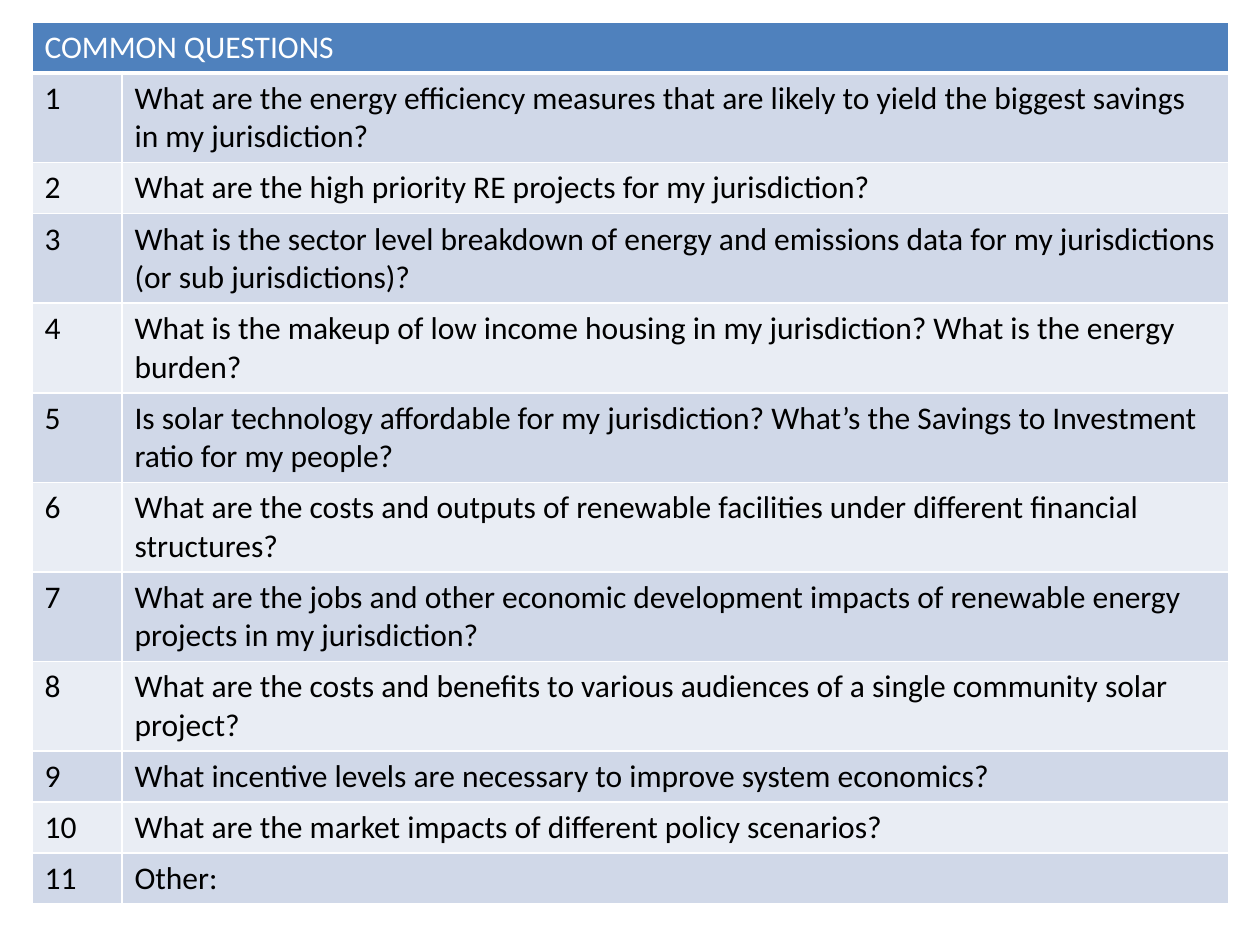
from lxml import etree
from pptx import Presentation
from pptx.dml.color import RGBColor
from pptx.oxml.ns import qn
from pptx.util import Inches, Pt

PX_PER_INCH = 126
SLIDE_WIDTH, SLIDE_HEIGHT = 1260, 945
TABLE_BOX = (32, 22, 1197, 873)
NUMBER_WIDTH = 90
ROW_HEIGHT = 51

WHITE = RGBColor(0xFF, 0xFF, 0xFF)
BLACK = RGBColor(0x00, 0x00, 0x00)
HEADER_BLUE = RGBColor(0x4F, 0x81, 0xBD)
BAND_COLORS = (RGBColor(0xD0, 0xD8, 0xE8), RGBColor(0xE9, 0xED, 0xF4))

FONT = {"name": "Calibri", "size": Pt(18), "bold": False}
BORDERS = {"a:lnL": 1, "a:lnR": 1, "a:lnT": 1, "a:lnB": 1}
HEADER_BORDERS = {**BORDERS, "a:lnB": 3}

TITLE = "COMMON QUESTIONS"
QUESTIONS = (
    "What are the energy efficiency measures that are likely to yield the biggest savings in my jurisdiction?",
    "What are the high priority RE projects for my jurisdiction?",
    "What is the sector level breakdown of energy and emissions data for my jurisdictions (or sub jurisdictions)?",
    "What is the makeup of low income housing in my jurisdiction? What is the energy burden?",
    "Is solar technology affordable for my jurisdiction? What’s the Savings to Investment ratio for my people?",
    "What are the costs and outputs of renewable facilities under different financial structures?",
    "What are the jobs and other economic development impacts of renewable energy projects in my jurisdiction?",
    "What are the costs and benefits to various audiences of a single community solar project?",
    "What incentive levels are necessary to improve system economics?",
    "What are the market impacts of different policy scenarios?",
    "Other:",
)


def px(length):
    return round(length * Inches(1) / PX_PER_INCH)


def set_borders(cell, borders):
    properties = cell._tc.get_or_add_tcPr()
    for side, points in borders.items():
        line = etree.SubElement(properties, qn(side), w=str(Pt(points)))
        line_fill = etree.SubElement(line, qn("a:solidFill"))
        etree.SubElement(line_fill, qn("a:srgbClr"), val=str(WHITE))


def style_cell(cell, fill_color, borders):
    set_borders(cell, borders)
    cell.fill.solid()
    cell.fill.fore_color.rgb = fill_color


def write_cell(cell, text, text_color):
    run = cell.text_frame.paragraphs[0].add_run()
    run.text = text
    for attribute, value in FONT.items():
        setattr(run.font, attribute, value)
    run.font.color.rgb = text_color


def add_question_table(slide, box):
    left, top, width, height = box
    frame = slide.shapes.add_table(
        len(QUESTIONS) + 1, 2, px(left), px(top), px(width), px(height)
    )
    table = frame.table
    table.first_row = False
    table.horz_banding = False
    for column, column_width in zip(table.columns, (NUMBER_WIDTH, width - NUMBER_WIDTH)):
        column.width = px(column_width)
    for row in table.rows:
        row.height = px(ROW_HEIGHT)
    frame.height = px(height)

    header = table.cell(0, 0)
    header.merge(table.cell(0, 1))
    for cell in table.rows[0].cells:
        style_cell(cell, HEADER_BLUE, HEADER_BORDERS)
    write_cell(header, TITLE, WHITE)

    for number, question in enumerate(QUESTIONS, start=1):
        band_color = BAND_COLORS[(number - 1) % 2]
        for cell, text in zip(table.rows[number].cells, (str(number), question)):
            style_cell(cell, band_color, BORDERS)
            write_cell(cell, text, BLACK)


def main():
    presentation = Presentation()
    presentation.slide_width = px(SLIDE_WIDTH)
    presentation.slide_height = px(SLIDE_HEIGHT)
    slide = presentation.slides.add_slide(presentation.slide_layouts[6])
    add_question_table(slide, TABLE_BOX)
    presentation.save("out.pptx")


if __name__ == "__main__":
    main()
